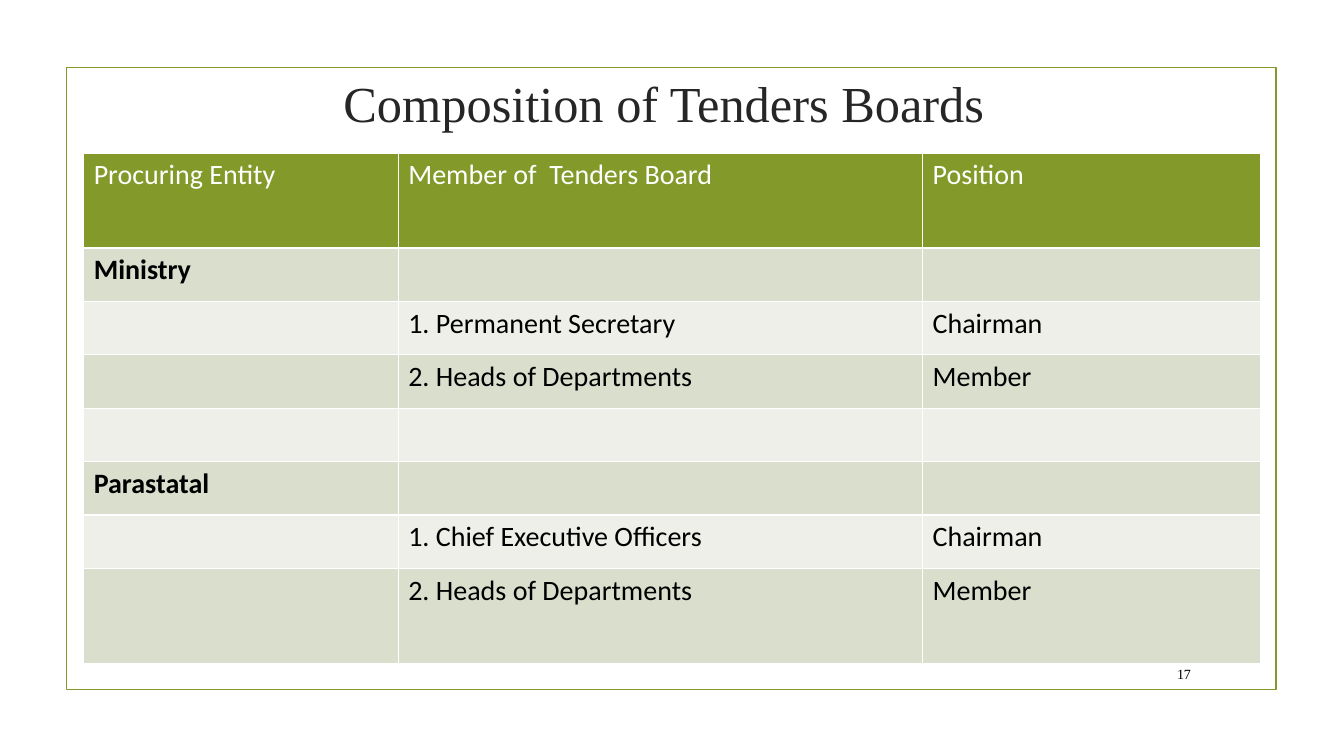
"""Build a slide with a table of the composition of tenders boards."""
from pptx import Presentation
from pptx import util as u
from pptx.dml.color import RGBColor
from pptx.enum import shapes, text

TITLE = "Composition of Tenders Boards"
PAGE_NUMBER = "17"
ROWS = [
    ("Procuring Entity", "Member of  Tenders Board", "Position"),
    ("Ministry", "", ""),
    ("", "1. Permanent Secretary", "Chairman"),
    ("", "2. Heads of Departments", "Member"),
    ("", "", ""),
    ("Parastatal", "", ""),
    ("", "1. Chief Executive Officers", "Chairman"),
    ("", "2. Heads of Departments", "Member"),
]
COLUMN_WIDTHS = (3.12, 5.2, 3.35)
TALL_ROW, ROW = 0.94, 0.53
ROW_HEIGHTS = [TALL_ROW] + [ROW] * (len(ROWS) - 2) + [TALL_ROW]

GREEN = RGBColor(0x83, 0x99, 0x2A)
DARK_BAND = RGBColor(0xD9, 0xDE, 0xCD)
LIGHT_BAND = RGBColor(0xED, 0xEF, 0xE8)
CHARCOAL = RGBColor(0x26, 0x26, 0x26)
BLACK = RGBColor(0, 0, 0)
WHITE = RGBColor(0xFF, 0xFF, 0xFF)
SERIF, SANS = "Times New Roman", "Calibri"


def write(frame, words, size, font=SANS, color=BLACK, bold=False,
          align=text.PP_ALIGN.LEFT, anchor=text.MSO_ANCHOR.MIDDLE):
    """Write one formatted paragraph into a text frame."""
    frame.word_wrap = True
    frame.vertical_anchor = anchor
    paragraph = frame.paragraphs[0]
    paragraph.alignment = align
    run = paragraph.add_run()
    run.text = words
    run.font.size = u.Pt(size)
    run.font.name = font
    run.font.bold = bold
    run.font.color.rgb = color


def add_frame(slide):
    """Draw the green outline around the slide content."""
    frame = slide.shapes.add_shape(
        shapes.MSO_SHAPE.RECTANGLE,
        u.Inches(0.66), u.Inches(0.67), u.Inches(12), u.Inches(6.17))
    frame.shadow.inherit = False
    frame.fill.background()
    frame.line.color.rgb = GREEN
    frame.line.width = u.Pt(1.25)


def add_title(slide):
    """Place and fill the title placeholder."""
    title = slide.shapes.title
    title.left, title.top = u.Inches(2), u.Inches(0.58)
    title.width, title.height = u.Inches(9.17), u.Inches(0.87)
    write(title.text_frame, TITLE, 36, font=SERIF, color=CHARCOAL,
          align=text.PP_ALIGN.CENTER)


def add_page_number(slide):
    """Put the page number at the lower right."""
    box = slide.shapes.add_textbox(
        u.Inches(11.32), u.Inches(6.53), u.Inches(0.59), u.Inches(0.31))
    write(box.text_frame, PAGE_NUMBER, 10, font=SERIF,
          align=text.PP_ALIGN.RIGHT)


def add_board_table(slide):
    """Add the table with a green header and alternating bands."""
    table = slide.shapes.add_table(
        len(ROWS), len(COLUMN_WIDTHS), u.Inches(0.83), u.Inches(1.52),
        u.Inches(sum(COLUMN_WIDTHS)), u.Inches(sum(ROW_HEIGHTS))).table
    for column, width in zip(table.columns, COLUMN_WIDTHS):
        column.width = u.Inches(width)
    for index, (row, height, values) in enumerate(
            zip(table.rows, ROW_HEIGHTS, ROWS)):
        row.height = u.Inches(height)
        is_header = index == 0
        band = DARK_BAND if index % 2 else LIGHT_BAND
        for position, (cell, value) in enumerate(zip(row.cells, values)):
            cell.fill.solid()
            cell.fill.fore_color.rgb = GREEN if is_header else band
            if value:
                write(cell.text_frame, value, 20,
                      color=WHITE if is_header else BLACK,
                      bold=position == 0 and not is_header,
                      anchor=text.MSO_ANCHOR.TOP)


def main():
    """Assemble and save the presentation."""
    presentation = Presentation()
    presentation.slide_width = u.Inches(13.33)
    presentation.slide_height = u.Inches(7.5)
    slide = presentation.slides.add_slide(presentation.slide_layouts[5])
    add_frame(slide)
    add_title(slide)
    add_page_number(slide)
    add_board_table(slide)
    presentation.save("out.pptx")


if __name__ == "__main__":
    main()
